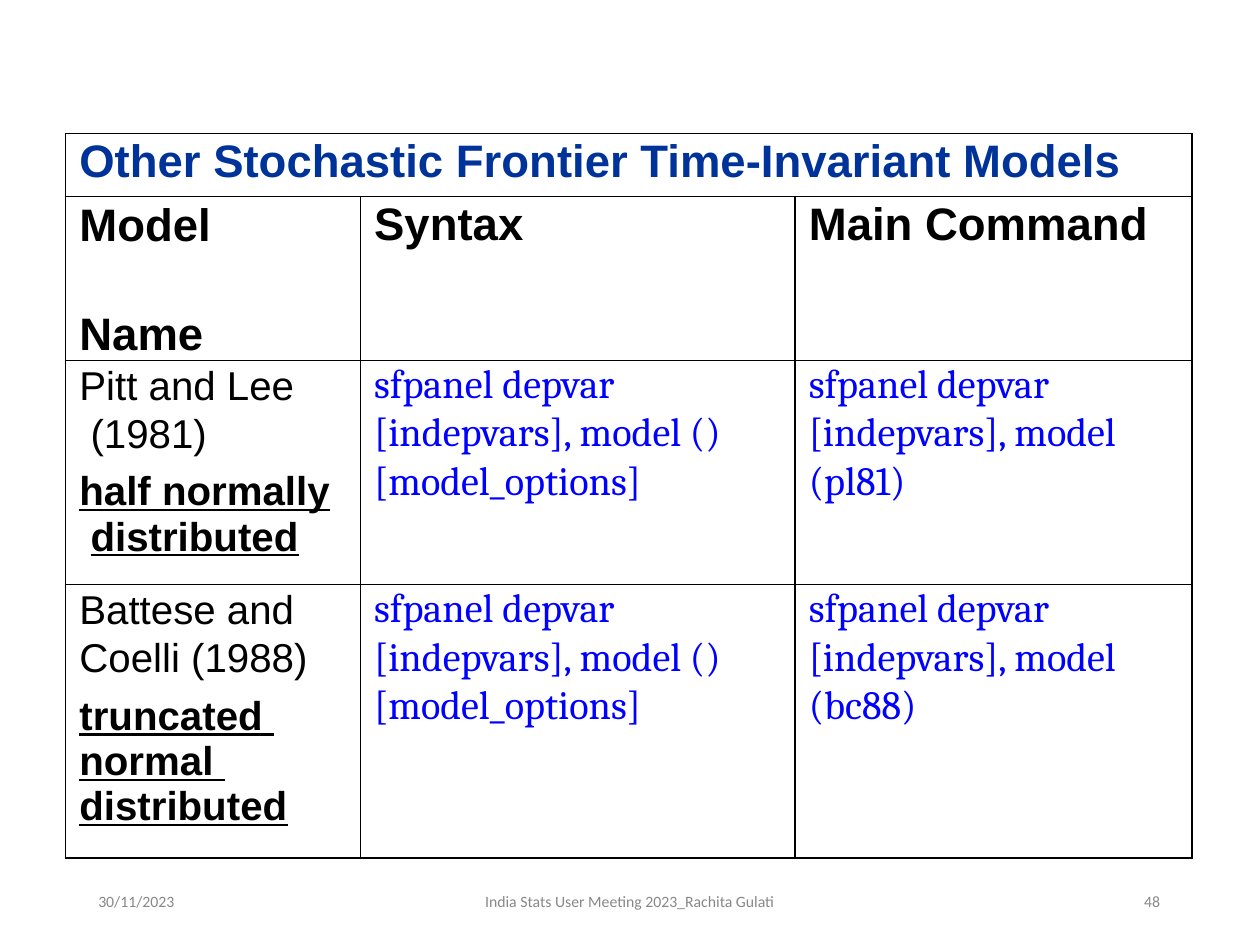
from lxml.etree import SubElement
from pptx import Presentation
from pptx.dml.color import RGBColor
from pptx.enum.text import MSO_AUTO_SIZE
from pptx.oxml.ns import qn
from pptx.util import Emu, Inches, Pt

BLACK = RGBColor(0, 0, 0)
NAVY = RGBColor(0x00, 0x33, 0x99)
BLUE = RGBColor(0, 0, 0xFF)
GREY = RGBColor(0x88, 0x88, 0x88)
BREAK = "\v"

# Style: font attributes, line spacing and space before in points
HEADING = (dict(name="Arial", size=Pt(26), bold=True, color=BLACK), 30.4, 0)
TITLE = (HEADING[0] | dict(color=NAVY), 30.4, 0)
HEAD_TOP = (HEADING[0], 31.2, 0.3)
HEAD_NEXT = (HEADING[0], 31.2, 31.2)
AUTHOR = (dict(name="Arial", size=Pt(23), bold=False, color=BLACK), 27.6, 0.3)
DISTRIBUTION = (AUTHOR[0] | dict(bold=True, underline=True), None, 7)
CODE = (dict(name="Cambria", size=Pt(23), bold=False, color=BLUE), 27.6, 0.1)
FOOTER = (dict(name="Calibri", size=Pt(9), color=GREY), 9.6, 0)

SYNTAX = [(CODE, ["sfpanel depvar ", BREAK, "[indepvars], model () ", BREAK,
                  "[model_options]"])]


def command(model):
    return [(CODE, ["sfpanel depvar ", BREAK, "[indepvars], model ", BREAK, f"({model})"])]


# Rows of cells; a cell is a list of (style, pieces) paragraphs
ROWS = [
    [[(TITLE, ["Other Stochastic Frontier Time-Invariant Models"])]],
    [[(HEAD_TOP, ["Model"]), (HEAD_NEXT, ["Name"])],
     [(HEADING, ["Syntax"])],
     [(HEADING, ["Main Command"])]],
    [[(AUTHOR, ["Pitt and Lee", BREAK, " (1981)"]),
      (DISTRIBUTION, ["half normally", BREAK, " ", "distributed"])],
     SYNTAX, command("pl81")],
    [[(AUTHOR, ["Battese and", BREAK, "Coelli (1988)"]),
      (DISTRIBUTION, ["truncated ", BREAK, "normal ", BREAK, "distributed"])],
     SYNTAX, command("bc88")],
]
COL_WIDTHS = [2.34, 3.45, 3.15]
ROW_HEIGHTS = [0.5, 1.3, 1.78, 2.17]
TABLE_LEFT, TABLE_TOP = 0.52, 1.06

# Text, left, width, indent
FOOTERS = [
    ("30/11/2023", 0.77, 0.62, 0.01),
    ("India Stats User Meeting 2023_Rachita Gulati", 3.84, 2.31, 0.01),
    ("48", 9.04, 0.21, 0.04),
]
FOOTER_TOP, FOOTER_HEIGHT = 7.09, 0.15
MARGINS = ("margin_left", "margin_top", "margin_right", "margin_bottom")


def clear_margins(target):
    for margin in MARGINS:
        setattr(target, margin, 0)


def write(tf, paragraphs, indent):
    for i, ((font, spacing, before), pieces) in enumerate(paragraphs):
        p = tf.paragraphs[0] if i == 0 else tf.add_paragraph()
        p.space_before = Pt(before)
        if spacing:
            p.line_spacing = Pt(spacing)
        p._p.get_or_add_pPr().set("marL", str(Inches(indent)))
        for piece in pieces:
            if piece == BREAK:
                p.add_line_break()
                continue
            r = p.add_run()
            r.text = piece
            for key, value in font.items():
                if key == "color":
                    r.font.color.rgb = value
                elif key != "underline" or piece.strip():
                    setattr(r.font, key, value)


def add_borders(cell):
    tcPr = cell._tc.get_or_add_tcPr()
    for i, side in enumerate(("lnL", "lnR", "lnT", "lnB")):
        ln = tcPr.makeelement(qn(f"a:{side}"), {"w": str(Pt(1))})
        fill = SubElement(ln, qn("a:solidFill"))
        SubElement(fill, qn("a:srgbClr"), val=str(BLACK))
        tcPr.insert(i, ln)


def add_models_table(s):
    table = s.shapes.add_table(
        len(ROW_HEIGHTS), len(COL_WIDTHS), Inches(TABLE_LEFT), Inches(TABLE_TOP),
        Inches(sum(COL_WIDTHS)), Inches(sum(ROW_HEIGHTS))).table
    table.first_row = table.horz_banding = False
    for column, width in zip(table.columns, COL_WIDTHS):
        column.width = Inches(width)
    for row, height in zip(table.rows, ROW_HEIGHTS):
        row.height = Inches(height)
    for cell in table.iter_cells():
        clear_margins(cell)
        cell.fill.background()
        add_borders(cell)
    table.cell(0, 0).merge(table.cell(0, len(COL_WIDTHS) - 1))
    for r, cells in enumerate(ROWS):
        for c, paragraphs in enumerate(cells):
            write(table.cell(r, c).text_frame, paragraphs, 0.11)


def add_footer(s, text, left, width, indent):
    tf = s.shapes.add_textbox(Inches(left), Inches(FOOTER_TOP),
                              Inches(width), Inches(FOOTER_HEIGHT)).text_frame
    clear_margins(tf)
    tf.word_wrap = True
    tf.auto_size = MSO_AUTO_SIZE.SHAPE_TO_FIT_TEXT
    write(tf, [(FOOTER, [text])], indent)


def main():
    prs = Presentation()
    prs.slide_width, prs.slide_height = Inches(10), Inches(7.5)
    s = prs.slides.add_slide(prs.slide_layouts[6])
    for footer in FOOTERS:
        add_footer(s, *footer)
    add_models_table(s)
    prs.save("out.pptx")


if __name__ == "__main__":
    main()
